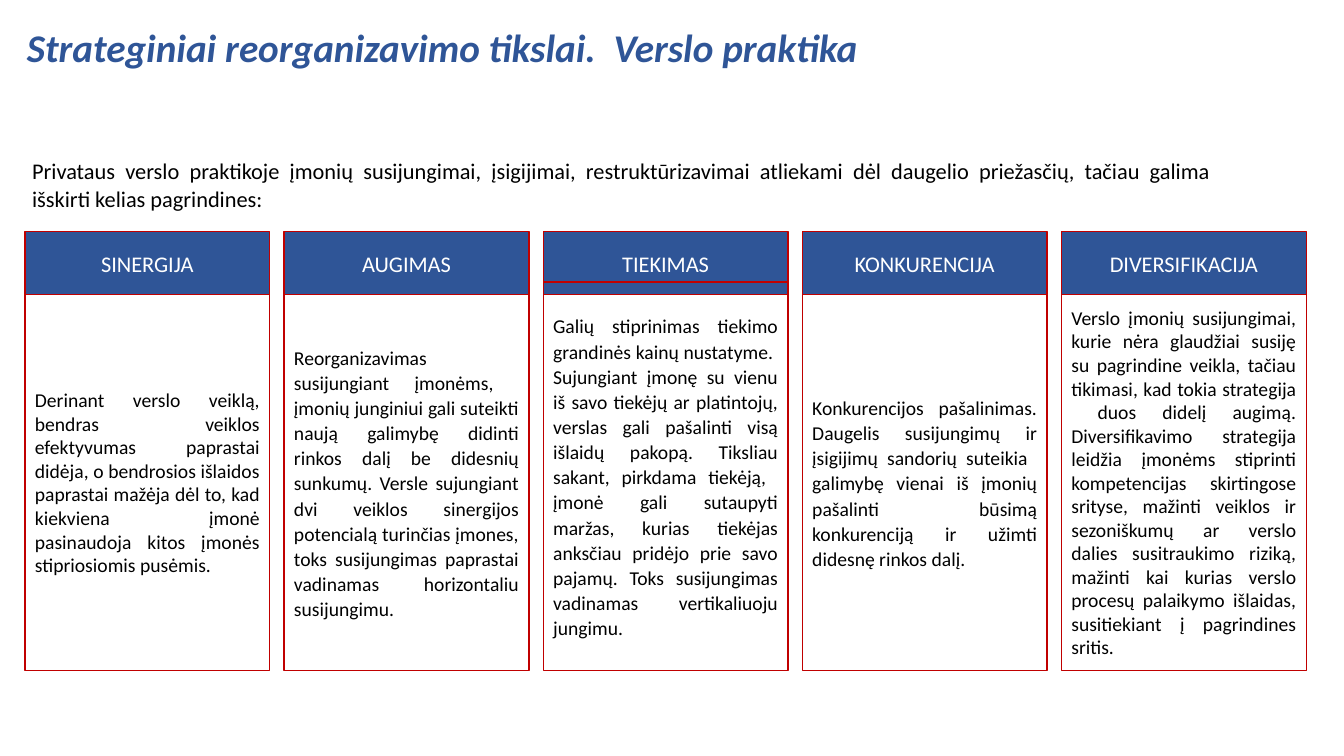
from pptx import Presentation
from pptx import util as u
from pptx.dml.color import RGBColor
from pptx.enum import shapes, text

BLUE = RGBColor(0x2F, 0x55, 0x97)
RED = RGBColor(0xC0, 0x00, 0x00)
BLACK = RGBColor(0x00, 0x00, 0x00)
WHITE = RGBColor(0xFF, 0xFF, 0xFF)

TITLE = "Strateginiai reorganizavimo tikslai.  Verslo praktika"
INTRO = (
    "Privataus verslo praktikoje įmonių susijungimai, įsigijimai, restruktūrizavimai "
    "atliekami dėl daugelio priežasčių, tačiau galima išskirti kelias pagrindines:"
)
HEAD_TOP, BODY_TOP, BOTTOM = 5.84, 7.42, 16.89
LEFT, PITCH, WIDTH = 0.63, 6.53, 6.17

GOALS = [
    ("SINERGIJA", BODY_TOP, False,
     "Derinant verslo veiklą, bendras veiklos efektyvumas paprastai didėja, o bendrosios "
     "išlaidos paprastai mažėja dėl to, kad kiekviena įmonė pasinaudoja kitos įmonės "
     "stipriosiomis pusėmis."),
    ("AUGIMAS", BODY_TOP, True,
     "Reorganizavimas susijungiant įmonėms,  įmonių junginiui gali suteikti naują galimybę "
     "didinti rinkos dalį be didesnių sunkumų. Versle sujungiant dvi veiklos sinergijos "
     "potencialą turinčias įmones, toks susijungimas paprastai vadinamas horizontaliu "
     "susijungimu."),
    ("TIEKIMAS", 7.11, True,
     "Galių stiprinimas tiekimo grandinės kainų nustatyme.  Sujungiant įmonę su vienu iš savo "
     "tiekėjų ar platintojų, verslas gali pašalinti visą išlaidų pakopą. Tiksliau sakant, "
     "pirkdama tiekėją,  įmonė gali sutaupyti maržas, kurias tiekėjas anksčiau pridėjo prie "
     "savo pajamų. Toks susijungimas vadinamas vertikaliuoju jungimu."),
    ("KONKURENCIJA", BODY_TOP, True,
     "Konkurencijos pašalinimas. Daugelis susijungimų ir įsigijimų sandorių suteikia  galimybę "
     "vienai iš įmonių pašalinti būsimą konkurenciją ir užimti didesnę rinkos dalį."),
    ("DIVERSIFIKACIJA", BODY_TOP, False,
     "Verslo įmonių susijungimai, kurie nėra glaudžiai susiję su pagrindine veikla, tačiau "
     "tikimasi, kad tokia strategija  duos didelį augimą. Diversifikavimo strategija leidžia "
     "įmonėms stiprinti kompetencijas skirtingose srityse, mažinti veiklos ir sezoniškumų ar "
     "verslo dalies susitraukimo riziką, mažinti kai kurias verslo procesų palaikymo išlaidas, "
     "susitiekiant į pagrindines sritis."),
]


class Deck:
    font = "Calibri"

    def __init__(self, prs):
        self.s = prs.slides.add_slide(prs.slide_layouts[6])

    def paragraph(self, tf, words, size, color, align, spaced=False):
        p = tf.paragraphs[0]
        p.text = words
        p.alignment = align
        p.font.name = self.font
        p.font.size = u.Pt(size)
        p.font.color.rgb = color
        if spaced:
            p.line_spacing = 1.07
            p.space_after = u.Pt(8)
        return p

    def label(self, box, words, size, color, align, wrap=True, spaced=False):
        tf = self.s.shapes.add_textbox(*map(u.Cm, box)).text_frame
        tf.word_wrap = wrap
        tf.auto_size = text.MSO_AUTO_SIZE.SHAPE_TO_FIT_TEXT
        return self.paragraph(tf, words, size, color, align, spaced)

    def rect(self, group, box, fill, words, size, color, align, spaced=False):
        sp = group.shapes.add_shape(shapes.MSO_SHAPE.RECTANGLE, *map(u.Cm, box))
        sp.shadow.inherit = False
        if fill is None:
            sp.fill.background()
        else:
            sp.fill.solid()
            sp.fill.fore_color.rgb = fill
        sp.line.color.rgb = RED
        sp.line.width = u.Pt(1)
        tf = sp.text_frame
        tf.word_wrap = True
        tf.vertical_anchor = text.MSO_ANCHOR.MIDDLE
        self.paragraph(tf, words, size, color, align, spaced)

    def card(self, left, head, body_top, spaced, body):
        group = self.s.shapes.add_group_shape()
        self.rect(group, (left, HEAD_TOP, WIDTH, BODY_TOP - HEAD_TOP), BLUE,
                  head, 16, WHITE, text.PP_ALIGN.CENTER)
        self.rect(group, (left, body_top, WIDTH, BOTTOM - body_top), None,
                  body, 14, BLACK, text.PP_ALIGN.JUSTIFY, spaced)


def main():
    prs = Presentation()
    prs.slide_width, prs.slide_height = u.Cm(33.87), u.Cm(19.05)
    deck = Deck(prs)
    p = deck.label((0.43, 0.46, 21.62, 1.45), TITLE, 28, BLUE, text.PP_ALIGN.LEFT, wrap=False)
    p.font.bold = p.font.italic = True
    deck.label((0.56, 3.78, 30.2, 1.68), INTRO, 16, BLACK, text.PP_ALIGN.JUSTIFY, spaced=True)
    for i, goal in enumerate(GOALS):
        deck.card(LEFT + i * PITCH, *goal)
    prs.save("out.pptx")


if __name__ == "__main__":
    main()
